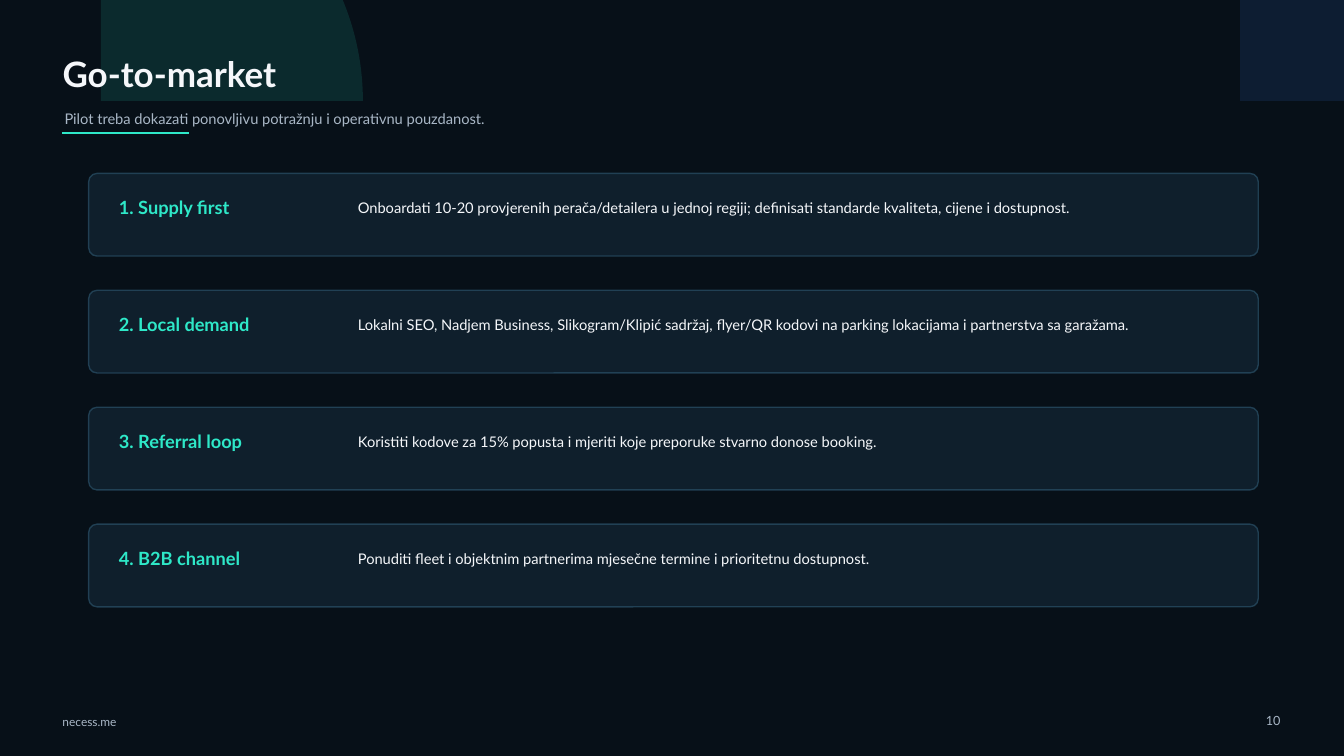
from lxml import etree
from pptx import Presentation
from pptx.dml.color import RGBColor
from pptx.enum.shapes import MSO_CONNECTOR, MSO_SHAPE
from pptx.enum.text import MSO_ANCHOR, MSO_AUTO_SIZE, PP_ALIGN
from pptx.oxml.ns import qn
from pptx.util import Pt

ARC = MSO_SHAPE.ARC
ROUND = MSO_SHAPE.ROUNDED_RECTANGLE
LINE = MSO_CONNECTOR.STRAIGHT
MIDDLE = MSO_ANCHOR.MIDDLE
FIXED = MSO_AUTO_SIZE.NONE
LEFT = PP_ALIGN.LEFT
RIGHT = PP_ALIGN.RIGHT

PX = 9144
COLORS = {
    "night": "071018",
    "card": "0F1F2C",
    "edge": "25475C",
    "mint": "2EE8C8",
    "blue": "3B82F6",
    "white": "F5F7FA",
    "grey": "A9B7C6",
}
STEPS = [
    ("1. Supply first", "Onboardati 10-20 provjerenih perača/detailera u jednoj regiji; definisati standarde kvaliteta, cijene i dostupnost."),
    ("2. Local demand", "Lokalni SEO, Nadjem Business, Slikogram/Klipić sadržaj, flyer/QR kodovi na parking lokacijama i partnerstva sa garažama."),
    ("3. Referral loop", "Koristiti kodove za 15% popusta i mjeriti koje preporuke stvarno donose booking."),
    ("4. B2B channel", "Ponuditi fleet i objektnim partnerima mjesečne termine i prioritetnu dostupnost."),
]


def scale(*sizes):
    return [size * PX for size in sizes]


def tint(name):
    return RGBColor.from_string(COLORS[name])


def assign(target, values):
    for key, value in values.items():
        setattr(target, key, value)


def fade(parent, percent):
    color = parent.find(qn("a:solidFill")).find(qn("a:srgbClr"))
    etree.SubElement(color, qn("a:alpha"), val=str(percent * 1000))


class Deck:
    def __init__(self, width, height, font):
        self.show = Presentation()
        self.show.slide_width, self.show.slide_height = scale(width, height)
        self.font = font
        self.slide = self.show.slides.add_slide(self.show.slide_layouts[5])
        back = self.slide.background.fill
        back.solid()
        back.fore_color.rgb = tint("night")

    def label(self, shape, words, size, color, bold=False, align=LEFT):
        frame = shape.text_frame
        assign(frame, {
            "text": words, "word_wrap": True, "auto_size": FIXED,
            "vertical_anchor": MIDDLE, "margin_left": 0, "margin_right": 0,
            "margin_top": 0, "margin_bottom": 0,
        })
        line = frame.paragraphs[0]
        line.alignment = align
        font = line.runs[0].font
        assign(font, {"name": self.font, "size": Pt(size), "bold": bold})
        font.color.rgb = tint(color)

    def title(self, box, words, size, color):
        shape = self.slide.shapes.title
        assign(shape, dict(zip(("left", "top", "width", "height"), scale(*box))))
        self.label(shape, words, size, color, bold=True)
        self.slide.shapes._spTree.append(shape._element)

    def text(self, box, words, size, color, **style):
        shape = self.slide.shapes.add_textbox(*scale(*box))
        self.label(shape, words, size, color, **style)

    def shape(self, kind, box, color):
        shape = self.slide.shapes.add_shape(kind, *scale(*box))
        shape.shadow.inherit = False
        shape.fill.solid()
        shape.fill.fore_color.rgb = tint(color)
        return shape

    def glow(self, box, color):
        shape = self.shape(ARC, box, color)
        shape.line.fill.background()
        fade(shape._element.spPr, 12)

    def card(self, box):
        shape = self.shape(ROUND, box, "card")
        shape.adjustments[0] = 0.1
        shape.line.color.rgb = tint("edge")
        shape.line.width = Pt(1)
        fade(shape._element.spPr.find(qn("a:ln")), 85)

    def rule(self, ends, color, width):
        line = self.slide.shapes.add_connector(LINE, *scale(*ends))
        line.line.color.rgb = tint(color)
        line.line.width = Pt(width)
        etree.SubElement(line._element.spPr, qn("a:effectLst"))


def main():
    deck = Deck(1333, 750, "Lato")
    deck.glow((-160, -160, 520, 520), "mint")
    deck.glow((950, -180, 560, 560), "blue")
    deck.title((62, 45, 840, 55), "Go-to-market", 25, "white")
    deck.text((64, 100, 860, 36), "Pilot treba dokazati ponovljivu potražnju i operativnu pouzdanost.", 10.5, "grey")
    deck.rule((62, 132, 187, 132), "mint", 2)
    for row, (name, detail) in enumerate(STEPS):
        top = 172 + row * 116
        deck.card((88, top, 1160, 82))
        deck.text((118, top + 22, 235, 24), name, 13, "mint", bold=True)
        deck.text((355, top + 17, 820, 34), detail, 10.5, "white")
    deck.text((62, 705, 140, 22), "necess.me", 8.5, "grey")
    deck.text((1225, 702, 45, 25), "10", 9, "grey", align=RIGHT)
    deck.show.save("out.pptx")


if __name__ == "__main__":
    main()
